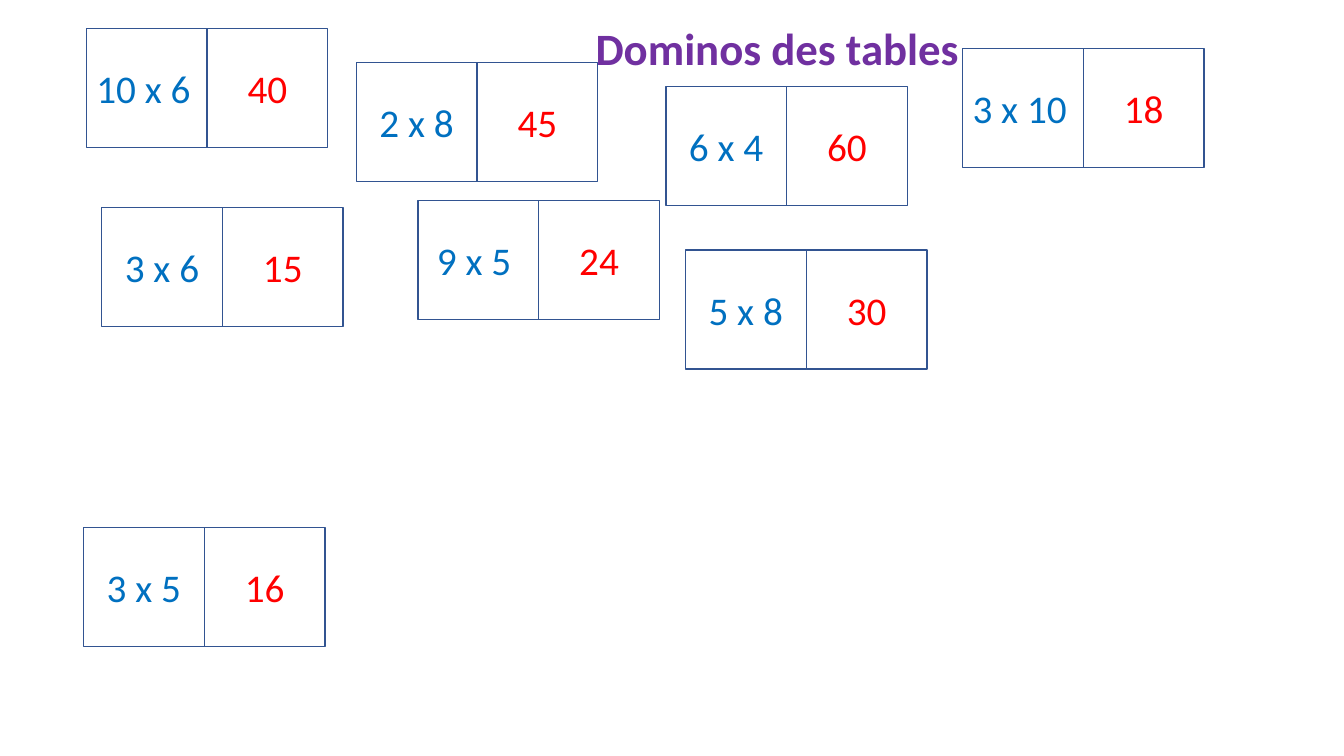
import pptx
import pptx.util
import pptx.dml.color
import pptx.enum.shapes
import pptx.enum.text

Pt = pptx.util.Pt
HALF_WIDTH, HALF_HEIGHT = 86.2, 85
INSET = 7.2
DOMINOES = [
    (72.7, 148.3, "3 x 6", 9.2, "15"),
    (59.8, 376.6, "3 x 5", 9.2, "16"),
    (254.6, 44.6, "2 x 8", 9.2, "45"),
    (298.6, 143.3, "9 x 5", 6.3, "24"),
    (475.7, 61.9, "6 x 4", 9.2, "60"),
    (61.7, 20.2, "10 x 6", 0, "40"),
    (489.7, 178.5, "5 x 8", 9.2, "30"),
    (687.6, 34.5, "3 x 10", 0, "18"),
]


def color(hex_string):
    return pptx.dml.color.RGBColor.from_string(hex_string)


def write(box, text, size, hex_string, align, bold=False):
    para = box.text_frame.paragraphs[0]
    para.text = text
    para.alignment = align
    font = para.runs[0].font
    font.name = "Calibri"
    font.size = Pt(size)
    font.bold = bold
    font.color.rgb = color(hex_string)


def add_title(page, left, top, width, height):
    box = page.shapes.add_textbox(Pt(left), Pt(top), Pt(width), Pt(height))
    box.text_frame.word_wrap = False
    box.text_frame.auto_size = pptx.enum.text.MSO_AUTO_SIZE.SHAPE_TO_FIT_TEXT
    write(box, "Dominos des tables", 32, "7030A0", pptx.enum.text.PP_ALIGN.LEFT, True)


def add_half(domino, left, top, text, hex_string, align, indent=0):
    half = domino.shapes.add_shape(
        pptx.enum.shapes.MSO_SHAPE.RECTANGLE,
        Pt(left), Pt(top), Pt(HALF_WIDTH), Pt(HALF_HEIGHT))
    half.shadow.inherit = False
    half.fill.background()
    half.line.color.rgb = color("325491")
    half.line.width = Pt(1)
    half.text_frame.word_wrap = True
    half.text_frame.vertical_anchor = pptx.enum.text.MSO_ANCHOR.MIDDLE
    half.text_frame.margin_left = Pt(INSET + indent)
    write(half, text, 28, hex_string, align)


def add_domino(page, left, top, product, indent, result):
    align = pptx.enum.text.PP_ALIGN
    domino = page.shapes.add_group_shape()
    add_half(domino, left, top, product, "0070C0", align.LEFT, indent)
    add_half(domino, left + HALF_WIDTH, top, result, "FF0000", align.CENTER)


def main():
    deck = pptx.Presentation()
    deck.slide_width, deck.slide_height = Pt(960), Pt(540)
    page = deck.slides.add_slide(deck.slide_layouts[6])
    add_title(page, 418.3, 11.5, 276.5, 46)
    for domino in DOMINOES:
        add_domino(page, *domino)
    deck.save("out.pptx")


if __name__ == "__main__":
    main()
